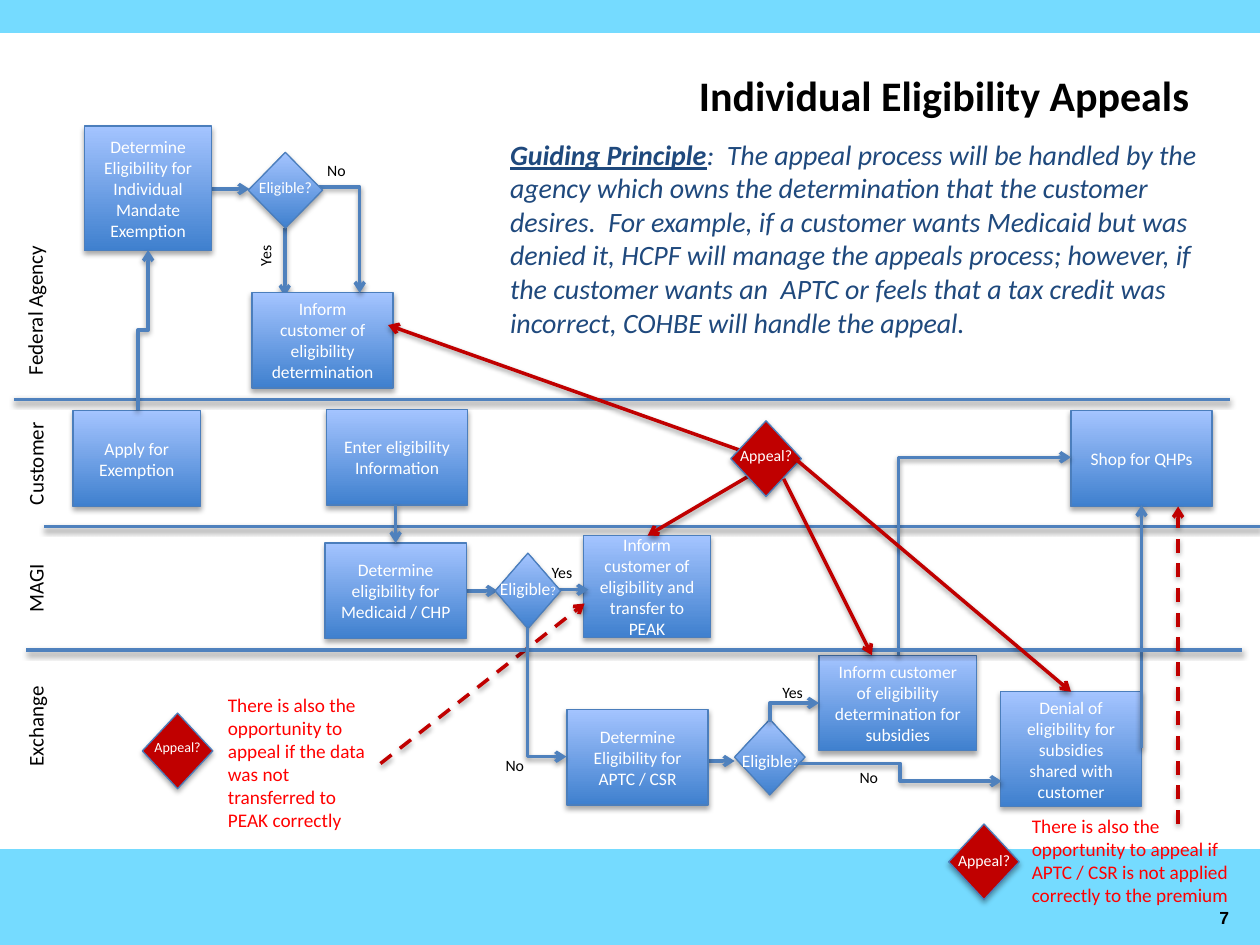
from lxml import etree
from pptx import Presentation
from pptx.dml.color import RGBColor
from pptx.enum import dml, shapes, text
from pptx.oxml.ns import qn
from pptx.util import Inches, Pt

SKY = RGBColor(0x75, 0xDB, 0xFF)
BLUE = RGBColor(0x4F, 0x81, 0xBD)
EDGE = RGBColor(0x4B, 0x7E, 0xBC)
DEEP = RGBColor(0x3F, 0x80, 0xCE)
PALE = RGBColor(0xA4, 0xC4, 0xFF)
NAVY = RGBColor(0x1F, 0x49, 0x7D)
CRIMSON = RGBColor(0xC0, 0x00, 0x00)
RED = RGBColor(0xFF, 0x00, 0x00)
BLACK = RGBColor(0, 0, 0)
WHITE = RGBColor(0xFF, 0xFF, 0xFF)

LEFT, CENTER, RIGHT = text.PP_ALIGN.LEFT, text.PP_ALIGN.CENTER, text.PP_ALIGN.RIGHT

# left, top, width, height, wording
STEPS = [
    (2.59, 3.25, 1.12, 0.76, "Enter eligibility Information"),
    (4.5, 5.63, 1.12, 0.76, "Determine Eligibility for APTC / CSR"),
    (7.94, 5.49, 1.12, 0.91, "Denial of eligibility for subsidies shared with customer"),
    (4.63, 4.25, 1.01, 0.81, "Inform customer of eligibility and transfer to PEAK"),
    (8.5, 3.26, 1.12, 0.76, "Shop for QHPs"),
    (6.5, 5.2, 1.25, 0.76, "Inform customer of eligibility determination for subsidies"),
    (0.58, 3.26, 1.01, 0.76, "Apply for Exemption"),
    (2.58, 4.31, 1.12, 0.76, "Determine eligibility for Medicaid / CHP"),
    (2, 2.32, 1.12, 0.76, "Inform customer of eligibility determination"),
    (0.67, 1, 1.01, 0.99, "Determine Eligibility for Individual Mandate Exemption"),
]
# left, top, width, label offset, word, word size, question mark size, crimson
DECISIONS = [
    (5.83, 5.71, 0.56, 0.19, "Eligible", 10, 7, False),
    (1.97, 1.21, 0.59, 0.15, "Eligible", 9, 9, False),
    (3.93, 4.39, 0.52, 0.15, "Eligible", 10, 7, False),
    (5.8, 3.34, 0.56, 0.15, "Appeal", 9, 9, True),
    (7.53, 6.54, 0.56, 0.16, "Appeal", 9, 9, True),
    (1.13, 5.66, 0.56, 0.15, "Appeal", 8, 8, True),
]
# from x, from y, to x, to y, colour, dashed
ARROWS_BEHIND_STEPS = [
    (5.56, 6.04, 5.83, 6.04, BLUE, False),
    (3.58, 4.69, 3.95, 4.69, BLUE, False),
    (1.6, 1.5, 1.98, 1.5, BLUE, False),
    (2.26, 1.81, 2.26, 2.35, BLUE, False),
]
ARROWS_BEHIND_DECISIONS = [
    (6.11, 3.68, 5.14, 4.25, CRIMSON, False),
    (5.92, 3.59, 3.08, 2.58, CRIMSON, False),
    (4.39, 4.68, 4.67, 4.68, BLUE, False),
    (3.02, 6.06, 4.64, 4.79, CRIMSON, True),
]
ARROWS_IN_FRONT = [
    (9.35, 6.54, 9.35, 4.02, CRIMSON, True),
    (3.14, 4.01, 3.14, 4.31, BLUE, False),
    (6.31, 3.64, 8.5, 5.49, CRIMSON, False),
    (6.22, 3.8, 6.92, 5.2, CRIMSON, False),
]
# left, top, width, height, rotation, flips, preset, bend at the start
ELBOWS_BEHIND = [
    (9.06, 4.01, 0, 1.93, 0, "V", "bentConnector2", False),
    (7.03, 3.73, 1.57, 1.37, 90, "HV", "bentConnector2", False),
    (2.25, 1.72, 0.84, 0.37, 270, "H", "bentConnector3", True),
    (0.5, 2.58, 1.27, 0.08, 90, "HV", "bentConnector3", False),
]
ELBOWS_IN_FRONT = [
    (3.83, 5.34, 1.02, 0.31, 270, "H", "bentConnector2", False),
    (6.11, 5.58, 0.39, 0.15, 0, "V", "bentConnector3", True),
    (6.34, 6.06, 1.61, 0.14, 0, "", "bentConnector3", False),
]
# left, top, width, height, rotation, wording
ANSWERS = [
    (4.17, 4.42, 0.58, 0.21, 0, "Yes"),
    (3.84, 5.95, 0.49, 0.25, 0, "No"),
    (6, 5.37, 0.58, 0.21, 0, "Yes"),
    (2.41, 1.23, 0.52, 0.25, 0, "No"),
    (1.8, 1.92, 0.58, 0.22, 270, "Yes"),
    (6.65, 6.04, 0.49, 0.25, 0, "No"),
]
LANE_NAMES = [
    (-0.48, 2.17, 1.51, "Federal Agency", LEFT),
    (-0.22, 3.53, 1, "Customer", CENTER),
    (-0.22, 4.52, 1, "MAGI", CENTER),
    (-0.22, 5.53, 1, "Exchange", LEFT),
]
NOTES = [
    (8.09, 6.41, 1.91, 0.84, "There is also the opportunity to appeal if APTC / CSR "
                             "is not applied correctly to the premium"),
    (1.71, 5.45, 1.31, 1.21, "There is also the opportunity to appeal if the data "
                             "was not transferred to PEAK correctly"),
]
PRINCIPLE = (":  The appeal process will be handled by the agency which owns the "
             "determination that the customer desires.  For example, if a customer "
             "wants Medicaid but was denied it, HCPF will manage the appeals process; "
             "however, if the customer wants an  APTC or feels that a tax credit was "
             "incorrect, COHBE will handle the appeal.")


def add_shadow(effects, distance, opacity):
    shadow = etree.SubElement(effects, qn("a:outerShdw"), blurRad=str(Pt(3.1)),
                              dist=str(Pt(distance)), dir="5400000", rotWithShape="0")
    color = etree.SubElement(shadow, qn("a:srgbClr"), val="000000")
    etree.SubElement(color, qn("a:alpha"), val=str(opacity * 1000))


def add_span(para, wording, size, color, bold=False, font="Calibri"):
    span = para.add_run()
    span.text = wording
    span.font.name, span.font.size, span.font.bold = font, Pt(size), bold
    span.font.color.rgb = color
    return span


def add_label(page, place, spans, align=LEFT, rotation=0, wrap=True):
    """Add a text box; each span holds the arguments of add_span."""
    box = page.shapes.add_textbox(*map(Inches, place))
    box.rotation = rotation
    box.text_frame.word_wrap = wrap
    para = box.text_frame.paragraphs[0]
    para.alignment = align
    return box, [add_span(para, *span) for span in spans]


def add_bar(page, top, height):
    bar = page.shapes.add_shape(shapes.MSO_SHAPE.RECTANGLE, 0, Inches(top),
                                Inches(10), Inches(height))
    bar.shadow.inherit = False
    bar.fill.solid()
    bar.fill.fore_color.rgb = bar.line.color.rgb = SKY
    bar.line.width = Pt(2)


def add_node(page, preset, place, solid=None):
    """Add a shadowed flowchart shape, with the blue gradient unless solid is given."""
    node = page.shapes.add_shape(preset, *map(Inches, place))
    node.shadow.inherit = False
    add_shadow(node._element.spPr.find(qn("a:effectLst")), 1.8, 35)
    if solid is None:
        node.fill.gradient()
        node.fill.gradient_angle = 90
        for stop, color, position in zip(node.fill.gradient_stops, (DEEP, PALE), (0, 1)):
            stop.color.rgb, stop.position = color, position
    else:
        node.fill.solid()
        node.fill.fore_color.rgb = solid
    node.line.color.rgb, node.line.width = EDGE, Pt(0.75)
    return node


def add_step(page, left, top, width, height, wording):
    frame = add_node(page, shapes.MSO_SHAPE.RECTANGLE, (left, top, width, height)).text_frame
    frame.word_wrap = True
    frame.vertical_anchor = text.MSO_ANCHOR.MIDDLE
    frame.paragraphs[0].alignment = CENTER
    add_span(frame.paragraphs[0], wording, 10, WHITE)


def add_decision(page, left, top, width, offset, word, size, mark_size, crimson):
    add_node(page, shapes.MSO_SHAPE.DIAMOND, (left, top, width, 0.6),
             CRIMSON if crimson else None)
    add_label(page, (left - width / 2, top + offset, 2 * width, 0.25),
              [(word, size, WHITE), ("?", mark_size, WHITE)], CENTER)


def add_line(page, x1, y1, x2, y2, color=BLUE, dashed=False, arrow=True,
             kind=shapes.MSO_CONNECTOR.STRAIGHT):
    line = page.shapes.add_connector(kind, *map(Inches, (x1, y1, x2, y2)))
    line.line.color.rgb, line.line.width = color, Pt(2)
    if dashed:
        line.line.dash_style = dml.MSO_LINE.DASH
    if arrow:
        etree.SubElement(line.line._get_or_add_ln(), qn("a:tailEnd"), type="arrow")
    add_shadow(etree.SubElement(line._element.spPr, qn("a:effectLst")), 1.6, 38)
    return line


def add_elbow(page, left, top, width, height, rotation, flips, preset, bend_at_start):
    elbow = add_line(page, left, top, left + width, top + height,
                     kind=shapes.MSO_CONNECTOR.ELBOW)
    frame = elbow._element.spPr.find(qn("a:xfrm"))
    frame.set("rot", str(rotation * 60000))
    for axis in flips:
        frame.set("flip" + axis, "1")
    geometry = elbow._element.spPr.find(qn("a:prstGeom"))
    geometry.set("prst", preset)
    if bend_at_start:
        guides = geometry.find(qn("a:avLst"))
        etree.SubElement(guides, qn("a:gd"), name="adj1", fmla="val 0")


def add_all(add, page, rows):
    for row in rows:
        add(page, *row)


def add_wording(page):
    title, _ = add_label(page, (5.41, 0.5, 4.13, 0.5),
                         [("Individual Eligibility Appeals", 24, BLACK, True)],
                         RIGHT, wrap=False)
    title.text_frame.vertical_anchor = text.MSO_ANCHOR.MIDDLE
    _, spans = add_label(page, (3.95, 1.04, 5.67, 1.72),
                         [("Guiding Principle", 16, NAVY, True), (PRINCIPLE, 16, NAVY)])
    for span in spans:
        span.font.italic = True
    spans[0].font.underline = True
    for *place, rotation, wording in ANSWERS:
        add_label(page, place, [(wording, 9, BLACK)], CENTER, rotation)
    for left, top, width, name, align in LANE_NAMES:
        add_label(page, (left, top, width, 0.3), [(name, 12, BLACK)], align, 270)
    for *place, wording in NOTES:
        add_label(page, place, [(wording, 11, RED)])
    add_label(page, (9.58, 7.15, 0.37, 0.27), [("7", 10, BLACK, True, "Arial")], wrap=False)


def main():
    deck = Presentation()
    deck.slide_width, deck.slide_height = Inches(10), Inches(7.5)
    page = deck.slides.add_slide(deck.slide_layouts[6])
    add_bar(page, 6.75, 0.75)
    add_bar(page, 0, 0.25)
    add_line(page, 0.35, 4.18, 10, 4.18, arrow=False)
    add_line(page, 0.11, 3.17, 9.76, 3.17, arrow=False)
    add_all(add_line, page, ARROWS_BEHIND_STEPS)
    add_all(add_step, page, STEPS)
    add_all(add_elbow, page, ELBOWS_BEHIND)
    add_all(add_line, page, ARROWS_BEHIND_DECISIONS)
    add_line(page, 0.21, 5.16, 9.86, 5.16, arrow=False)
    add_all(add_decision, page, DECISIONS)
    add_all(add_elbow, page, ELBOWS_IN_FRONT)
    add_all(add_line, page, ARROWS_IN_FRONT)
    add_wording(page)
    deck.save("out.pptx")


if __name__ == "__main__":
    main()
